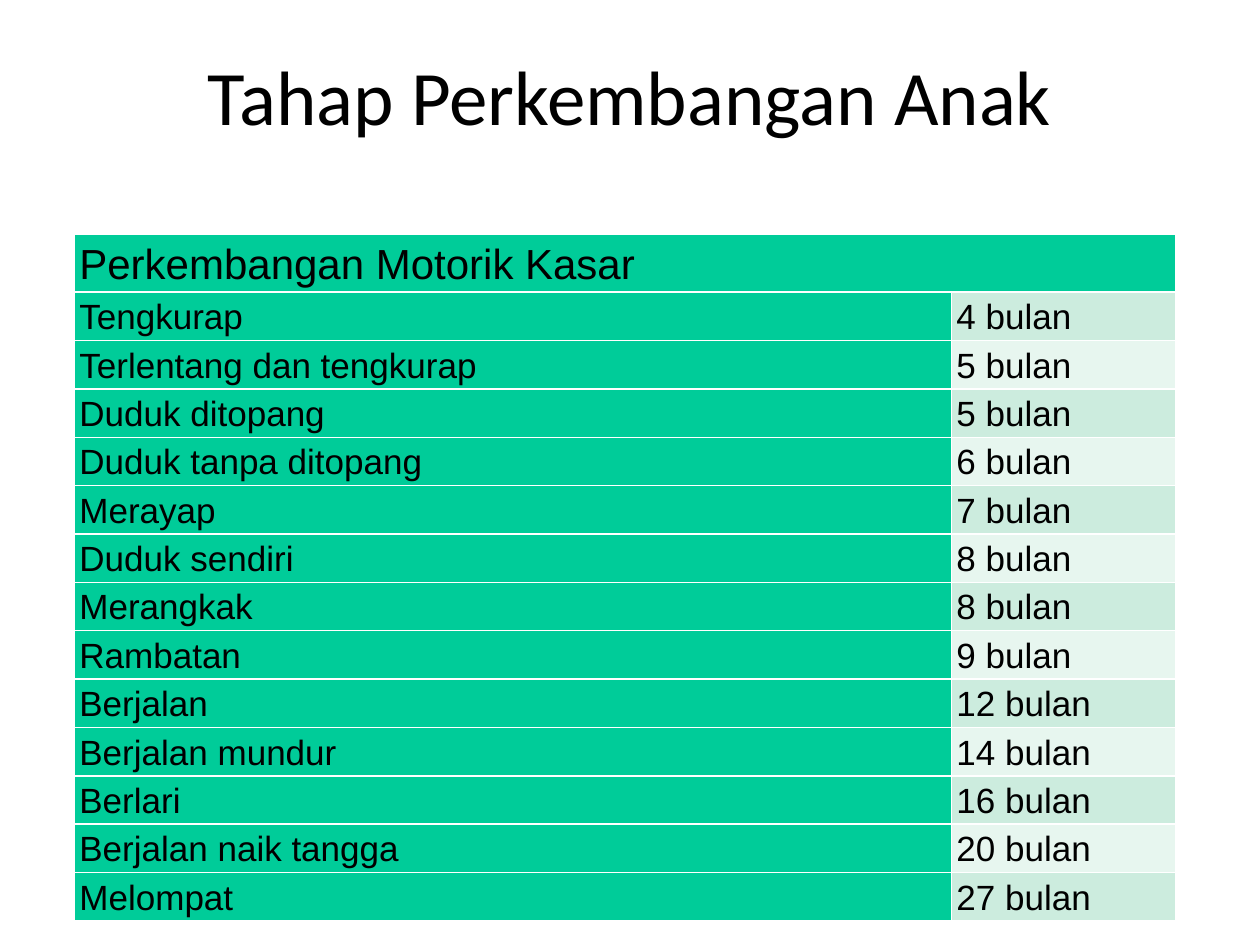
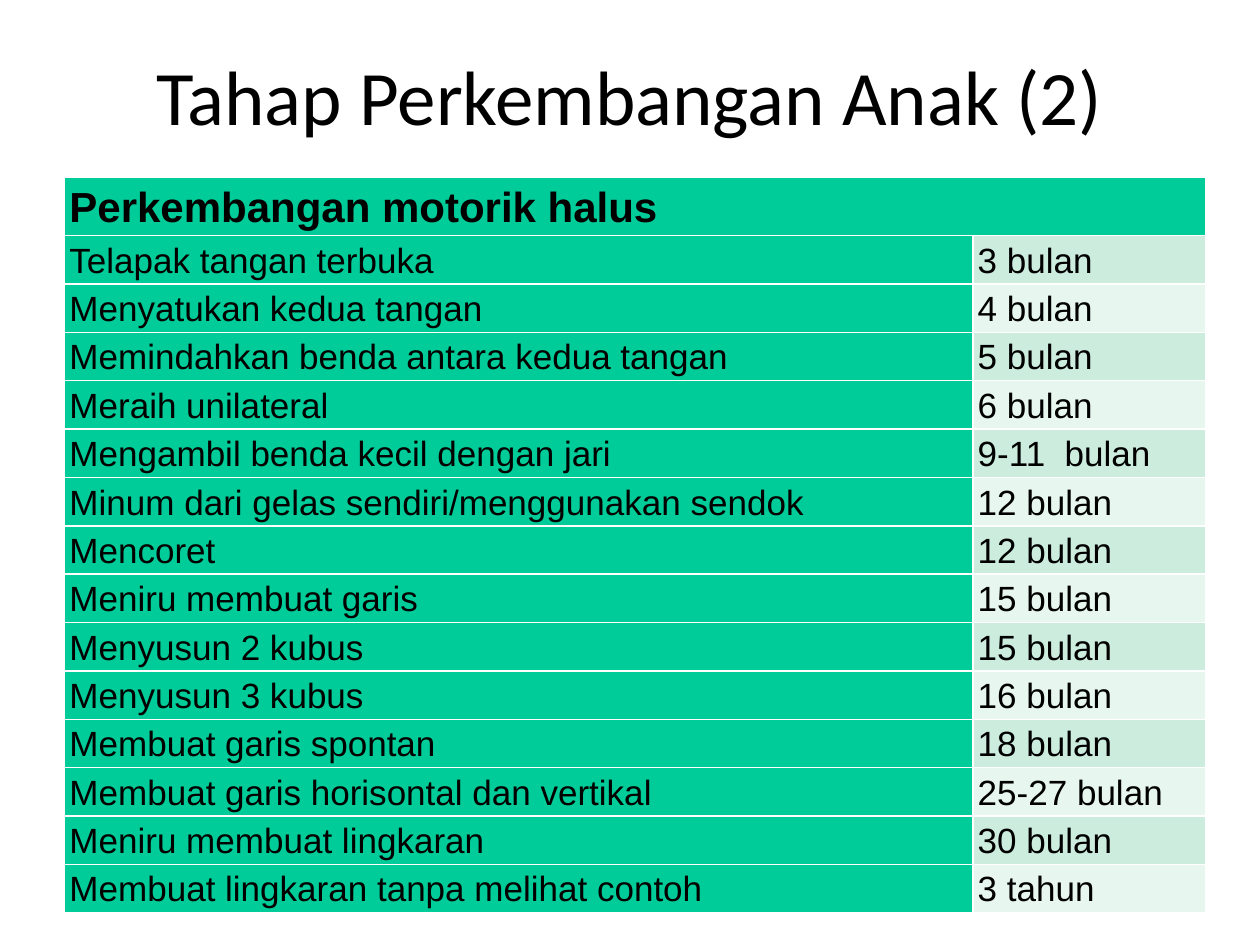
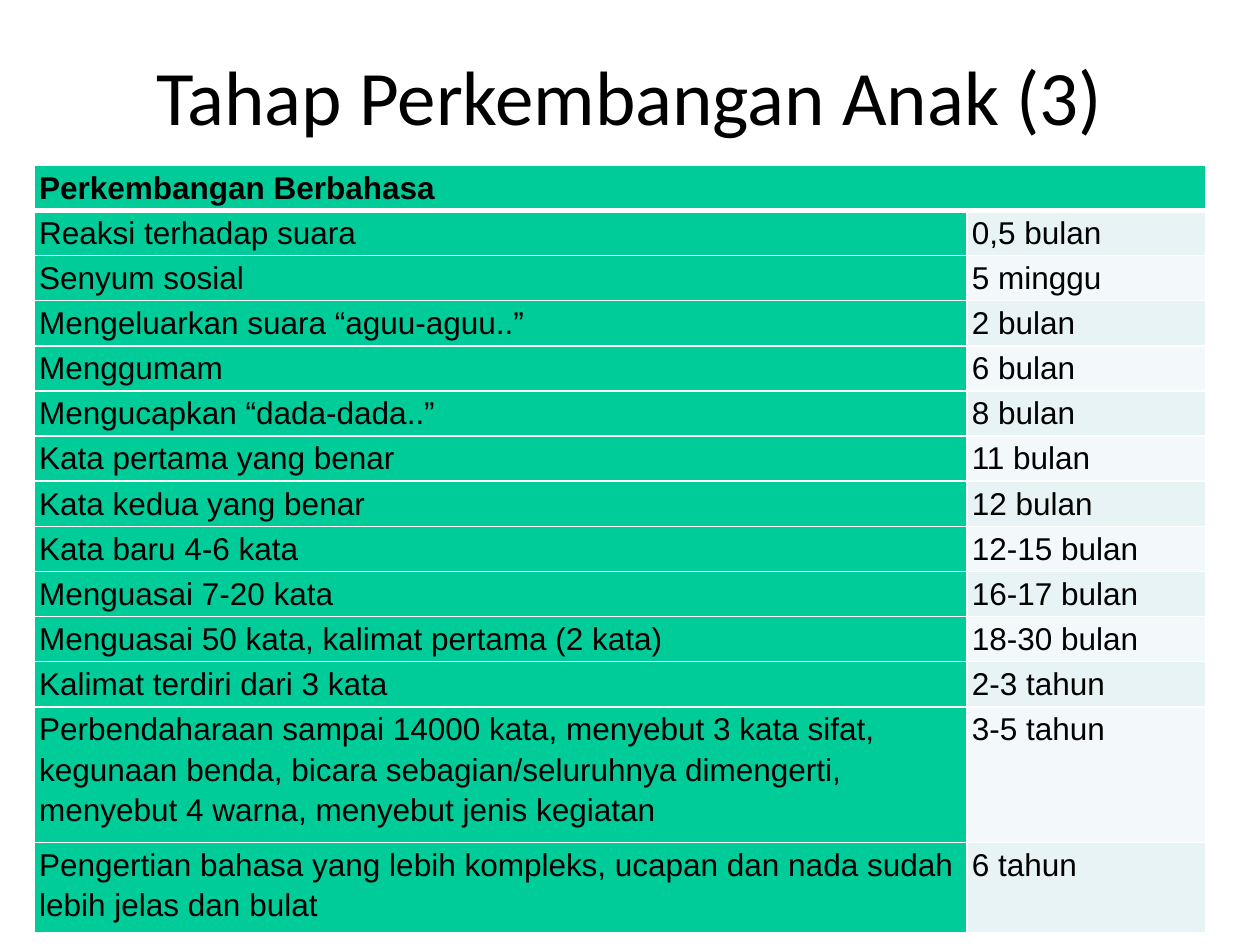
from dataclasses import dataclass

from lxml import etree
from pptx import Presentation
from pptx.dml.color import RGBColor
from pptx.enum.text import MSO_ANCHOR, PP_ALIGN
from pptx.oxml.ns import qn
from pptx.util import Cm, Pt

CENTER = PP_ALIGN.CENTER
TOP = MSO_ANCHOR.TOP
BLANK_LAYOUT = 6


@dataclass(frozen=True)
class Theme:
    """Colours, fonts and type sizes shared by the slides."""

    text: str = "000000"
    stage_fill: str = "00CC99"
    rule: str = "FFFFFF"
    green_bands: tuple = ("CCECDE", "E7F6EF")
    blue_bands: tuple = ("E7F3F4", "F3F9FA")
    title_font: str = "Calibri"
    table_font: str = "Arial"
    title_size: int = 44
    heading_size: int = 24
    body_size: int = 20
    compact_size: int = 18
    line_spacing: float = 1.15
    thin_rule: int = 1
    thick_rule: int = 3


THEME = Theme()


@dataclass(frozen=True)
class StageTable:
    """Place and style of one table of milestones, lengths in cm."""

    left: float
    top: float
    stage_width: float
    age_width: float
    heading_height: float = 1.17
    line_height: float = 0.97
    heading_size: int = THEME.heading_size
    body_size: int = THEME.body_size
    heading_bold: bool = True
    heading_rule: int = THEME.thin_rule
    bands: tuple = THEME.green_bands


GROSS_MOTOR = [
    ("Tengkurap", "4 bulan"),
    ("Terlentang dan tengkurap", "5 bulan"),
    ("Duduk ditopang", "5 bulan"),
    ("Duduk tanpa ditopang", "6 bulan"),
    ("Merayap", "7 bulan"),
    ("Duduk sendiri", "8 bulan"),
    ("Merangkak", "8 bulan"),
    ("Rambatan", "9 bulan"),
    ("Berjalan", "12 bulan"),
    ("Berjalan mundur", "14 bulan"),
    ("Berlari", "16 bulan"),
    ("Berjalan naik tangga", "20 bulan"),
    ("Melompat", "27 bulan"),
]

FINE_MOTOR = [
    ("Telapak tangan terbuka", "3 bulan"),
    ("Menyatukan kedua tangan", "4 bulan"),
    ("Memindahkan benda antara kedua tangan", "5 bulan"),
    ("Meraih unilateral", "6 bulan"),
    ("Mengambil benda kecil dengan jari", "9-11  bulan"),
    ("Minum dari gelas sendiri/menggunakan sendok", "12 bulan"),
    ("Mencoret", "12 bulan"),
    ("Meniru membuat garis", "15 bulan"),
    ("Menyusun 2 kubus", "15 bulan"),
    ("Menyusun 3 kubus", "16 bulan"),
    ("Membuat garis spontan", "18 bulan"),
    ("Membuat garis horisontal dan vertikal", "25-27 bulan"),
    ("Meniru membuat lingkaran", "30 bulan"),
    ("Membuat lingkaran tanpa melihat contoh", "3 tahun"),
]

LANGUAGE = [
    ("Reaksi terhadap suara", "0,5 bulan"),
    ("Senyum sosial", "5 minggu"),
    ("Mengeluarkan suara “aguu-aguu..”", "2 bulan"),
    ("Menggumam", "6 bulan"),
    ("Mengucapkan “dada-dada..”", "8 bulan"),
    ("Kata pertama yang benar", "11 bulan"),
    ("Kata kedua yang benar", "12 bulan"),
    ("Kata baru 4-6 kata", "12-15 bulan"),
    ("Menguasai 7-20 kata", "16-17 bulan"),
    ("Menguasai 50 kata, kalimat pertama (2 kata)", "18-30 bulan"),
    ("Kalimat terdiri dari 3 kata", "2-3 tahun"),
    ("Perbendaharaan sampai 14000 kata, menyebut 3 kata sifat, "
     "kegunaan benda, bicara sebagian/seluruhnya dimengerti, "
     "menyebut 4 warna, menyebut jenis kegiatan", "3-5 tahun", 3),
    ("Pengertian bahasa yang lebih kompleks, ucapan dan nada sudah "
     "lebih jelas dan bulat", "6 tahun", 2),
]


def set_font(paragraph, name, size, bold=False):
    """Give a paragraph its typeface, size, weight and the text colour."""
    font = paragraph.font
    font.name = name
    font.size = Pt(size)
    font.bold = bold
    font.color.rgb = RGBColor.from_string(THEME.text)


def add_title(slide, title):
    """Add the centred slide title."""
    frame = slide.shapes.add_textbox(Cm(1.27), Cm(0.76), Cm(22.86), Cm(3.18)).text_frame
    frame.word_wrap = True
    frame.vertical_anchor = TOP
    frame.margin_top = Cm(0.22)
    paragraph = frame.paragraphs[0]
    paragraph.text = title
    paragraph.alignment = CENTER
    set_font(paragraph, THEME.title_font, THEME.title_size)


def add_cell_rules(cell, top, bottom):
    """Draw the four borders of a cell, with top and bottom widths in points."""
    properties = cell._tc.get_or_add_tcPr()
    widths = {"lnL": THEME.thin_rule, "lnR": THEME.thin_rule, "lnT": top, "lnB": bottom}
    for side, width in widths.items():
        line = etree.SubElement(properties, qn(f"a:{side}"), w=str(Pt(width)))
        fill = etree.SubElement(line, qn("a:solidFill"))
        etree.SubElement(fill, qn("a:srgbClr"), val=THEME.rule)


def fill_cell(cell, text, fill, size, bold=False, top=THEME.thin_rule, bottom=THEME.thin_rule):
    """Write one table cell with its borders, background and text."""
    add_cell_rules(cell, top, bottom)
    cell.fill.solid()
    cell.fill.fore_color.rgb = RGBColor.from_string(fill)
    cell.margin_left = cell.margin_right = Cm(0.1)
    cell.margin_top = cell.margin_bottom = 0
    paragraph = cell.text_frame.paragraphs[0]
    paragraph.text = text
    paragraph.line_spacing = THEME.line_spacing
    set_font(paragraph, THEME.table_font, size, bold)


def add_stage_table(slide, heading, milestones, style):
    """Add a table of milestones and ages under a heading across both columns."""
    line_counts = [lines[0] if lines else 1 for _, _, *lines in milestones]
    heights = [style.heading_height] + [style.line_height * count for count in line_counts]
    table = slide.shapes.add_table(
        len(heights), 2, Cm(style.left), Cm(style.top),
        Cm(style.stage_width + style.age_width), Cm(sum(heights))).table
    table.first_row = table.horz_banding = False
    for column, width in zip(table.columns, (style.stage_width, style.age_width)):
        column.width = Cm(width)
    for row, height in zip(table.rows, heights):
        row.height = Cm(height)

    table.cell(0, 0).merge(table.cell(0, 1))
    for column, text in enumerate((heading, "")):
        fill_cell(table.cell(0, column), text, THEME.stage_fill, style.heading_size,
                  style.heading_bold, bottom=style.heading_rule)
    for row, (stage, age, *_) in enumerate(milestones, start=1):
        top = style.heading_rule if row == 1 else THEME.thin_rule
        band = style.bands[(row - 1) % 2]
        fill_cell(table.cell(row, 0), stage, THEME.stage_fill, style.body_size, top=top)
        fill_cell(table.cell(row, 1), age, band, style.body_size, top=top)


def main():
    """Build the three slides on child development."""
    deck = Presentation()
    deck.slide_width, deck.slide_height = Cm(25.4), Cm(19.05)
    pages = [
        ("Tahap Perkembangan Anak", "Perkembangan Motorik Kasar", GROSS_MOTOR,
         StageTable(1.5, 4.72, 17.68, 4.52, heading_bold=False)),
        ("Tahap Perkembangan Anak (2)", "Perkembangan motorik halus", FINE_MOTOR,
         StageTable(1.3, 3.58, 18.31, 4.7)),
        ("Tahap Perkembangan Anak (3)", "Perkembangan Berbahasa", LANGUAGE,
         StageTable(0.69, 3.33, 18.8, 4.82, heading_height=0.91, line_height=0.91,
                    heading_size=THEME.compact_size, body_size=THEME.compact_size,
                    heading_rule=THEME.thick_rule, bands=THEME.blue_bands)),
    ]
    for title, heading, milestones, style in pages:
        slide = deck.slides.add_slide(deck.slide_layouts[BLANK_LAYOUT])
        add_title(slide, title)
        add_stage_table(slide, heading, milestones, style)
    deck.save("out.pptx")


if __name__ == "__main__":
    main()
